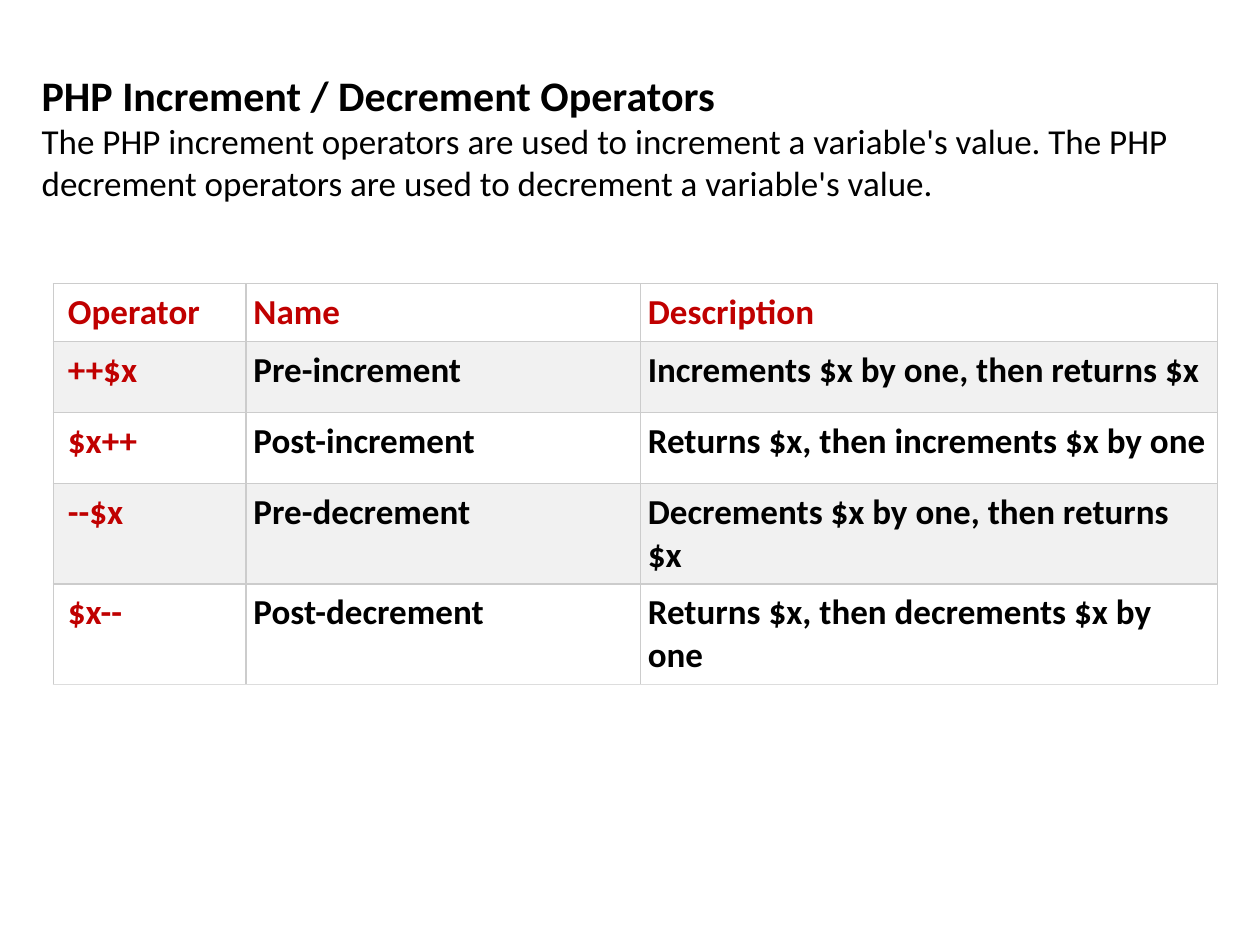
from lxml import etree
from pptx import Presentation
from pptx.dml.color import RGBColor
from pptx.enum.text import MSO_ANCHOR, MSO_AUTO_SIZE, PP_ALIGN
from pptx.oxml.ns import qn
from pptx.util import Cm, Pt

LEFT = PP_ALIGN.LEFT
MIDDLE = MSO_ANCHOR.MIDDLE
NO_AUTOFIT = MSO_AUTO_SIZE.NONE
TITLE_ONLY = 5
FONT = "Calibri"
COLORS = {
    "text": "000000",
    "accent": "C00000",
    "row": "FFFFFF",
    "band": "F1F1F1",
    "border": "CCCCCC",
    "bottom": "DDDDDD",
}


def format_paragraph(p, size, color, bold):
    p.alignment = LEFT
    for r in p.runs:
        r.font.name = FONT
        r.font.size = Pt(size)
        r.font.bold = bold
        r.font.color.rgb = RGBColor.from_string(COLORS[color])


def set_borders(cell, bottom):
    """Draw thin lines on all four sides; call before setting the fill."""
    tc_pr = cell._tc.get_or_add_tcPr()
    sides = {"lnL": "border", "lnR": "border", "lnT": "border", "lnB": bottom}
    for side, color in sides.items():
        ln = etree.SubElement(tc_pr, qn(f"a:{side}"), w=str(Pt(0.75)))
        fill = etree.SubElement(ln, qn("a:solidFill"))
        etree.SubElement(fill, qn("a:srgbClr"), val=COLORS[color])


prs = Presentation()
prs.slide_width, prs.slide_height = Cm(25.4), Cm(19.05)
slide = prs.slides.add_slide(prs.slide_layouts[TITLE_ONLY])

# Heading and introduction
title = slide.shapes.title
title.left, title.top, title.width, title.height = Cm(0.84), Cm(1.14), Cm(23.06), Cm(3.23)
tf = title.text_frame
tf.word_wrap = True
tf.auto_size = NO_AUTOFIT
tf.vertical_anchor = MIDDLE
tf.margin_left = tf.margin_right = 0
tf.margin_top = tf.margin_bottom = Cm(0.25)
tf.text = (
    "PHP Increment / Decrement Operators\n"
    "The PHP increment operators are used to increment a variable's value. "
    "The PHP decrement operators are used to decrement a variable's value."
)
heading, intro = tf.paragraphs
format_paragraph(heading, 24, "text", True)
format_paragraph(intro, 20, "text", False)

# Operator table
rows = [
    ("Operator", "Name", "Description"),
    ("++$x", "Pre-increment", "Increments $x by one, then returns $x"),
    ("$x++", "Post-increment", "Returns $x, then increments $x by one"),
    ("--$x", "Pre-decrement", "Decrements $x by one, then returns $x"),
    ("$x--", "Post-decrement", "Returns $x, then decrements $x by one"),
]
col_widths = [3.89, 7.95, 11.63]
row_heights = [1.15, 1.43, 1.43, 2, 2]

table = slide.shapes.add_table(
    len(rows), len(col_widths), Cm(1.07), Cm(5.72), Cm(sum(col_widths)), Cm(sum(row_heights))
).table
table.first_row = table.horz_banding = False
for column, width in zip(table.columns, col_widths):
    column.width = Cm(width)

for i, texts in enumerate(rows):
    table.rows[i].height = Cm(row_heights[i])
    for j, text in enumerate(texts):
        cell = table.cell(i, j)
        cell.text = text
        cell.margin_left = Cm(0.3 if j == 0 else 0.15)
        cell.margin_right = cell.margin_top = cell.margin_bottom = Cm(0.15)
        set_borders(cell, "bottom" if i == len(rows) - 1 else "border")
        cell.fill.solid()
        cell.fill.fore_color.rgb = RGBColor.from_string(COLORS["band" if i % 2 else "row"])
        color = "accent" if i == 0 or j == 0 else "text"
        format_paragraph(cell.text_frame.paragraphs[0], 20, color, True)

prs.save("out.pptx")
